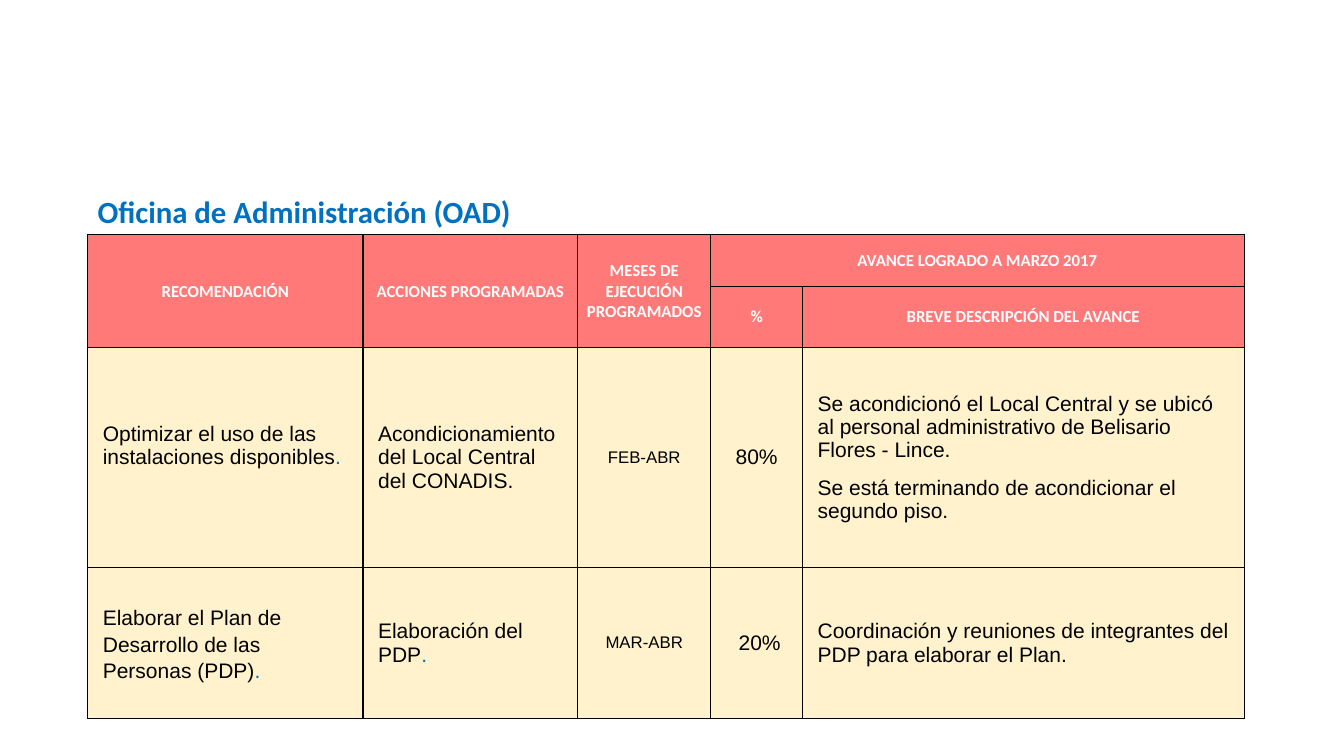
from lxml import etree
from pptx import Presentation
from pptx.dml.color import RGBColor
from pptx.enum import text
from pptx.oxml.ns import qn
from pptx.util import Inches, Pt

HEADER_FILL, BODY_FILL = "FF7979", "FFF2CC"
WHITE, BLACK, BLUE = "FFFFFF", "000000", "0070C0"
COLUMN_WIDTHS = [2.73, 2.13, 1.32, 0.91, 4.38]
ROW_HEIGHTS = [0.51, 0.52, 2.18, 1.5]
HEADER_ROWS = 2
MONTHS_COLUMN, PERCENT_COLUMN = 2, 3

HEADERS = {
    (0, 0): "RECOMENDACIÓN",
    (0, 1): "ACCIONES PROGRAMADAS",
    (0, 2): "MESES DE EJECUCIÓN PROGRAMADOS",
    (0, 3): "AVANCE LOGRADO A MARZO 2017",
    (1, 3): "%",
    (1, 4): "BREVE DESCRIPCIÓN DEL AVANCE",
}
MERGES = [((0, 0), (1, 0)), ((0, 1), (1, 1)), ((0, 2), (1, 2)), ((0, 3), (0, 4))]

# Each cell is a list of paragraphs, each paragraph a list of (text, colour) runs.
DOT = (".", BLUE)
BODY = [
    [
        [[("Optimizar el uso de las instalaciones disponibles", BLACK), DOT]],
        [[("Acondicionamiento del Local Central del CONADIS.", BLACK)]],
        [[("FEB-ABR", BLACK)]],
        [[("80%", BLACK)]],
        [[("Se acondicionó el Local Central y se ubicó al personal administrativo "
           "de Belisario Flores - Lince.", BLACK)],
         [("Se está terminando de acondicionar el segundo piso.", BLACK)]],
    ],
    [
        [[("Elaborar el Plan de Desarrollo de las Personas (PDP)", BLACK), DOT]],
        [[("Elaboración del PDP", BLACK), DOT]],
        [[("MAR-ABR", BLACK)]],
        [[("20%", BLACK)]],
        [[("Coordinación y reuniones de integrantes del PDP para elaborar el Plan.",
           BLACK)]],
    ],
]


def rgb(value):
    return RGBColor.from_string(value)


def add_run(paragraph, words, font_name, size, colour, bold=False):
    run = paragraph.add_run()
    run.text = words
    run.font.name = font_name
    run.font.size = Pt(size)
    run.font.bold = bold
    run.font.color.rgb = rgb(colour)


def set_borders(cell, colour=BLACK, width=1):
    """Draw all four sides; the lines must precede the fill in the cell properties."""
    properties = cell._tc.get_or_add_tcPr()
    for position, side in enumerate(("a:lnL", "a:lnR", "a:lnT", "a:lnB")):
        line = etree.Element(qn(side), w=str(Pt(width)))
        fill = etree.SubElement(line, qn("a:solidFill"))
        etree.SubElement(fill, qn("a:srgbClr"), val=colour)
        properties.insert(position, line)


def style_cell(cell, fill, horizontal, vertical):
    cell.fill.solid()
    cell.fill.fore_color.rgb = rgb(fill)
    set_borders(cell)
    cell.vertical_anchor = text.MSO_ANCHOR.MIDDLE
    cell.margin_left = cell.margin_right = Inches(horizontal)
    cell.margin_top = cell.margin_bottom = Inches(vertical)


def fill_header(table):
    for row in range(HEADER_ROWS):
        for column in range(len(COLUMN_WIDTHS)):
            style_cell(table.cell(row, column), HEADER_FILL, 0.08, 0)
    for first, last in MERGES:
        table.cell(*first).merge(table.cell(*last))
    for position, words in HEADERS.items():
        paragraph = table.cell(*position).text_frame.paragraphs[0]
        paragraph.alignment = text.PP_ALIGN.CENTER
        add_run(paragraph, words, "Calibri", 12, WHITE, bold=True)


def fill_body(table):
    for row, contents in enumerate(BODY, HEADER_ROWS):
        for column, paragraphs in enumerate(contents):
            cell = table.cell(row, column)
            style_cell(cell, BODY_FILL, 0.15, 0.15)
            frame = cell.text_frame
            for index, runs in enumerate(paragraphs):
                paragraph = frame.add_paragraph() if index else frame.paragraphs[0]
                if column in (MONTHS_COLUMN, PERCENT_COLUMN):
                    paragraph.alignment = text.PP_ALIGN.CENTER
                if index < len(paragraphs) - 1:
                    paragraph.space_after = Pt(10)
                for words, colour in runs:
                    size = 12 if column == MONTHS_COLUMN else 15
                    add_run(paragraph, words, "Arial", size, colour)

    first_recommendation, second_recommendation = table.cell(2, 0), table.cell(3, 0)
    first_recommendation.margin_bottom = Inches(0.39)
    second_recommendation.text_frame.paragraphs[0].line_spacing = 1.15
    table.cell(3, PERCENT_COLUMN).margin_left = Inches(0.21)


def add_progress_table(slide, left, top):
    shape = slide.shapes.add_table(
        len(ROW_HEIGHTS), len(COLUMN_WIDTHS), Inches(left), Inches(top),
        Inches(sum(COLUMN_WIDTHS)), Inches(sum(ROW_HEIGHTS)))
    table = shape.table
    for column, width in zip(table.columns, COLUMN_WIDTHS):
        column.width = Inches(width)
    for row, height in zip(table.rows, ROW_HEIGHTS):
        row.height = Inches(height)
    fill_header(table)
    fill_body(table)


def add_office_title(slide, left, top, width, height):
    shape = slide.shapes.add_textbox(
        Inches(left), Inches(top), Inches(width), Inches(height))
    frame = shape.text_frame
    frame.word_wrap = False
    frame.auto_size = text.MSO_AUTO_SIZE.SHAPE_TO_FIT_TEXT
    add_run(frame.paragraphs[0], "Oficina de Administración (OAD)",
            "Calibri", 22, BLUE, bold=True)


def main():
    presentation = Presentation()
    presentation.slide_width = Inches(13.33)
    presentation.slide_height = Inches(7.5)
    slide = presentation.slides.add_slide(presentation.slide_layouts[6])
    add_progress_table(slide, 0.87, 2.33)
    add_office_title(slide, 0.87, 1.86, 4.35, 0.47)
    presentation.save("out.pptx")


if __name__ == "__main__":
    main()
